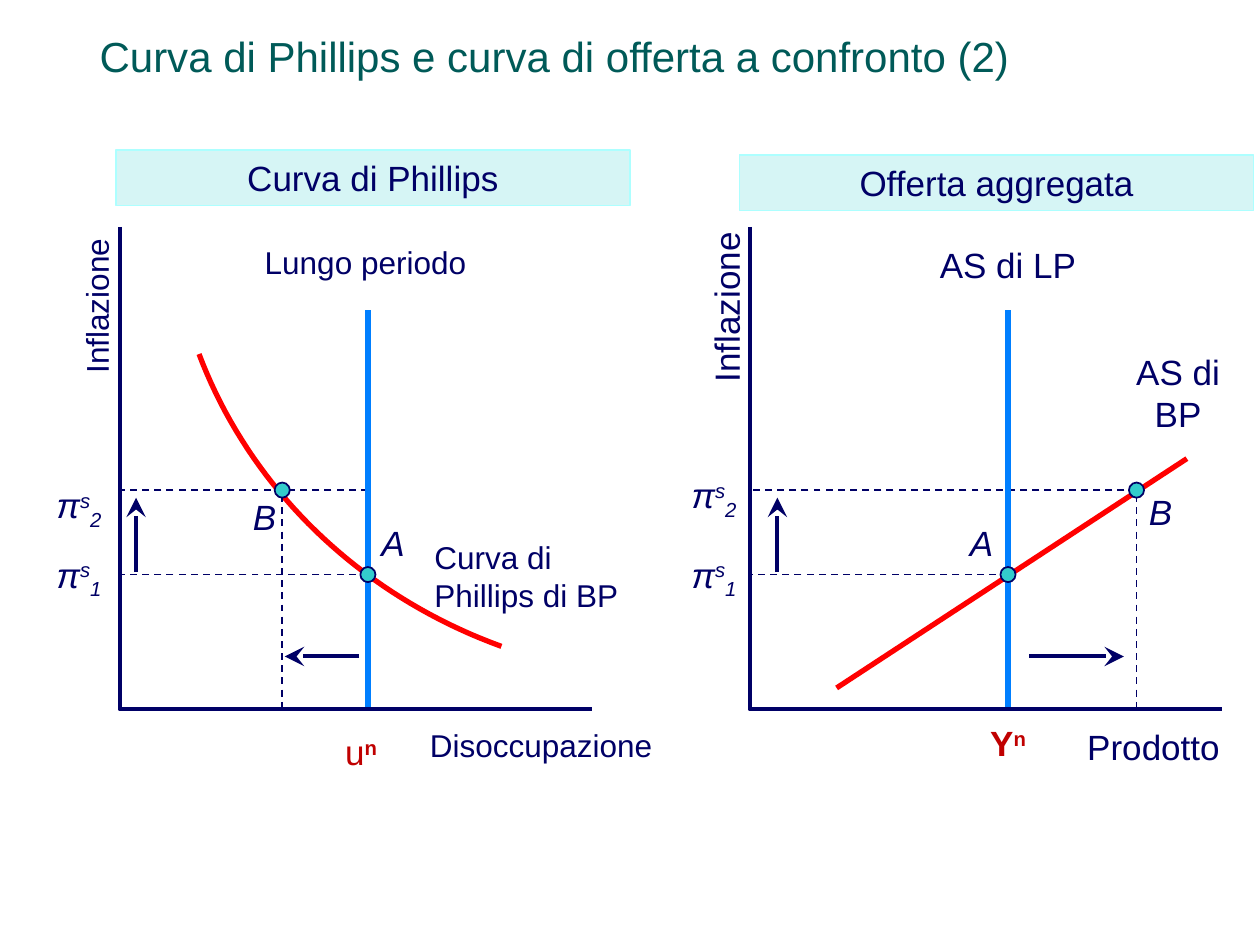
from dataclasses import dataclass

from lxml import etree
from pptx import Presentation
from pptx.dml.color import RGBColor
from pptx.enum.dml import MSO_LINE
from pptx.enum.shapes import MSO_CONNECTOR, MSO_SHAPE
from pptx.enum.text import MSO_ANCHOR, PP_ALIGN
from pptx.oxml.ns import qn
from pptx.util import Inches, Pt

STRAIGHT = MSO_CONNECTOR.STRAIGHT
RECTANGLE, OVAL = MSO_SHAPE.RECTANGLE, MSO_SHAPE.OVAL
DASH = MSO_LINE.DASH
LEFT, CENTER = PP_ALIGN.LEFT, PP_ALIGN.CENTER
TOP, MIDDLE = MSO_ANCHOR.TOP, MSO_ANCHOR.MIDDLE
TITLE_ONLY = 5


@dataclass(frozen=True)
class Theme:
    """Colours, font and sizes of the slide."""
    font: str = "Arial"
    title: str = "005A58"
    ink: str = "000066"
    natural: str = "C00000"
    long_run: str = "007FFF"
    short_run: str = "FF0000"
    dot: str = "33CCCC"
    header: str = "D6F5F5"
    header_edge: str = "ADFFFF"
    title_size: int = 24
    large: int = 20
    small: int = 18
    curve_width: float = 3
    axis_width: float = 2.25
    guide_width: float = 1
    edge_width: float = 0.75


THEME = Theme()
AXIS_TOP, AXIS_BOTTOM, AXIS_LENGTH = 1.8, 5.63, 3.75
LONG_RUN_TOP = 2.46
INFLATION_1, INFLATION_2 = 4.56, 3.89


def rgb(code):
    """Turn a hex code into a colour."""
    return RGBColor.from_string(code)


def style_line(line, color, width):
    """Give a line its colour and width."""
    line.color.rgb = rgb(color)
    line.width = Pt(width)


def style_run(run, size, color, bold=False, italic=False, baseline=0):
    """Format a run; baseline is a percentage above or below the line."""
    font = run.font
    font.name, font.size, font.bold, font.italic = THEME.font, Pt(size), bold, italic
    font.color.rgb = rgb(color)
    if baseline:
        run._r.get_or_add_rPr().set("baseline", str(baseline * 1000))


def add_title(slide, text):
    """Place and format the slide title."""
    title = slide.shapes.title
    title.left, title.top, title.width, title.height = map(Inches, (0.69, 0.09, 9.2, 0.61))
    frame = title.text_frame
    frame.text = text
    frame.vertical_anchor = MIDDLE
    paragraph = frame.paragraphs[0]
    paragraph.alignment = LEFT
    paragraph.line_spacing = 1.25
    style_run(paragraph.runs[0], THEME.title_size, THEME.title)


def add_label(slide, text, box, size=THEME.large, align=CENTER, italic=False, rotation=0):
    """Add a wrapped text label."""
    label = slide.shapes.add_textbox(*map(Inches, box))
    label.rotation = rotation
    frame = label.text_frame
    frame.word_wrap = True
    frame.vertical_anchor = TOP
    frame.text = text
    frame.paragraphs[0].alignment = align
    style_run(frame.paragraphs[0].runs[0], size, THEME.ink, italic=italic)


def add_symbol(slide, left, top, color, parts):
    """Add a symbol from (text, baseline, bold, italic) parts."""
    frame = slide.shapes.add_textbox(*map(Inches, (left, top, 0.61, 0.44))).text_frame
    frame.word_wrap = False
    for text, baseline, bold, italic in parts:
        run = frame.paragraphs[0].add_run()
        run.text = text
        style_run(run, THEME.large, color, bold, italic, baseline)


def add_header(slide, text, left, top):
    """Add the tinted heading of a diagram."""
    header = slide.shapes.add_shape(RECTANGLE, *map(Inches, (left, top, 4.08, 0.44)))
    header.shadow.inherit = False
    header.fill.solid()
    header.fill.fore_color.rgb = rgb(THEME.header)
    style_line(header.line, THEME.header_edge, THEME.edge_width)
    header.text_frame.text = text
    paragraph = header.text_frame.paragraphs[0]
    paragraph.alignment = CENTER
    style_run(paragraph.runs[0], THEME.large, THEME.ink)


def add_line(slide, start, end, color=THEME.ink, width=THEME.guide_width, dashed=False, arrow=False):
    """Add a straight line, optionally dashed or with an arrowhead at its end."""
    line = slide.shapes.add_connector(STRAIGHT, *map(Inches, (*start, *end)))
    style_line(line.line, color, width)
    if dashed:
        line.line.dash_style = DASH
    properties = line.element.spPr
    if arrow:
        etree.SubElement(properties.get_or_add_ln(), qn("a:tailEnd"),
                         type="stealth", w="lg", len="lg")
    etree.SubElement(properties, qn("a:effectLst"))


def add_path(slide, points, color, width):
    """Add an open, unfilled outline through the points."""
    start, *others = [tuple(map(Inches, point)) for point in points]
    builder = slide.shapes.build_freeform(*start)
    builder.add_line_segments(others, close=False)
    path = builder.convert_to_shape()
    path.shadow.inherit = False
    path.fill.background()
    style_line(path.line, color, width)


def bezier(start, control_1, control_2, end, steps=40):
    """Return points along a cubic Bezier curve."""
    def point(t):
        weights = ((1 - t) ** 3, 3 * t * (1 - t) ** 2, 3 * t * t * (1 - t), t ** 3)
        corners = (start, control_1, control_2, end)
        return tuple(sum(w * c[axis] for w, c in zip(weights, corners)) for axis in (0, 1))
    return [point(step / steps) for step in range(steps + 1)]


def add_dot(slide, x, y):
    """Mark an equilibrium point."""
    size = 0.12
    dot = slide.shapes.add_shape(OVAL, *map(Inches, (x - size / 2, y - size / 2, size, size)))
    dot.shadow.inherit = False
    dot.fill.solid()
    dot.fill.fore_color.rgb = rgb(THEME.dot)
    style_line(dot.line, THEME.ink, THEME.guide_width)


def add_diagram(slide, axis_x, natural_x, shifted_x, guide_end, up_x, shift):
    """Draw the axes, guides, long-run line, shift arrows and points A and B."""
    for y, end in ((INFLATION_1, natural_x), (INFLATION_2, guide_end)):
        add_line(slide, (end, y), (axis_x, y), dashed=True)
    add_line(slide, (natural_x, AXIS_BOTTOM), (natural_x, LONG_RUN_TOP),
             THEME.long_run, THEME.curve_width)
    add_path(slide, [(axis_x, AXIS_TOP), (axis_x, AXIS_BOTTOM),
                     (axis_x + AXIS_LENGTH, AXIS_BOTTOM)], THEME.ink, THEME.axis_width)
    add_line(slide, (shifted_x, 3.93), (shifted_x, 5.61), dashed=True)
    add_line(slide, (shift[0], 5.21), (shift[1], 5.21), width=THEME.axis_width, arrow=True)
    add_line(slide, (up_x, 4.54), (up_x, 3.95), width=THEME.axis_width, arrow=True)
    add_dot(slide, natural_x, INFLATION_1)
    add_dot(slide, shifted_x, INFLATION_2)


def main():
    """Build the slide and save it."""
    deck = Presentation()
    deck.slide_width, deck.slide_height = Inches(10), Inches(7.5)
    slide = deck.slides.add_slide(deck.slide_layouts[TITLE_ONLY])
    add_title(slide, "Curva di Phillips e curva di offerta a confronto (2)")
    add_header(slide, "Curva di Phillips", 0.92, 1.19)
    add_header(slide, "Offerta aggregata", 5.87, 1.23)

    phillips = bezier((3.98, 5.13), (2.85, 4.72), (1.98, 3.87), (1.58, 2.81))
    add_path(slide, phillips, THEME.short_run, THEME.curve_width)
    add_line(slide, (6.64, 5.46), (9.42, 3.64), THEME.short_run, THEME.curve_width)
    add_diagram(slide, 0.95, 2.92, 2.24, 2.92, 1.08, (2.85, 2.26))
    add_diagram(slide, 5.95, 8, 9.02, 9.02, 6.17, (8.17, 8.92))

    add_label(slide, "Inflazione", (-0.36, 2.23, 2.25, 0.4), THEME.small, rotation=270)
    add_label(slide, "Inflazione", (4.64, 2.22, 2.25, 0.44), rotation=270)
    add_label(slide, "Disoccupazione", (3.19, 5.71, 2.21, 0.4), THEME.small)
    add_label(slide, "Prodotto", (8.5, 5.71, 1.31, 0.44))
    add_label(slide, "Lungo periodo", (1.69, 1.88, 2.42, 0.4), THEME.small)
    add_label(slide, "AS di LP", (6.79, 1.88, 2.42, 0.44))
    add_label(slide, "Curva di Phillips di BP", (3.35, 4.22, 1.7, 0.71), THEME.small, LEFT)
    add_label(slide, "AS di BP", (8.7, 2.73, 1.3, 0.77))
    for point, left, top in (("A", 2.83, 4.09), ("B", 1.81, 3.88),
                             ("A", 7.5, 4.09), ("B", 8.92, 3.84)):
        add_label(slide, point, (left, top, 0.58, 0.44), italic=True)

    add_symbol(slide, 2.64, 5.75, THEME.natural, [("u", 0, False, False), ("n", 30, True, False)])
    add_symbol(slide, 7.76, 5.68, THEME.natural, [("Y", 0, True, False), ("n", 30, True, False)])
    for index, left, top in (("1", 0.35, 4.34), ("2", 0.35, 3.79),
                             ("1", 5.39, 4.34), ("2", 5.39, 3.71)):
        add_symbol(slide, left, top, THEME.ink, [("π", 0, False, True), ("s", 30, False, True),
                                                 (index, -25, False, True)])
    deck.save("out.pptx")


if __name__ == "__main__":
    main()
